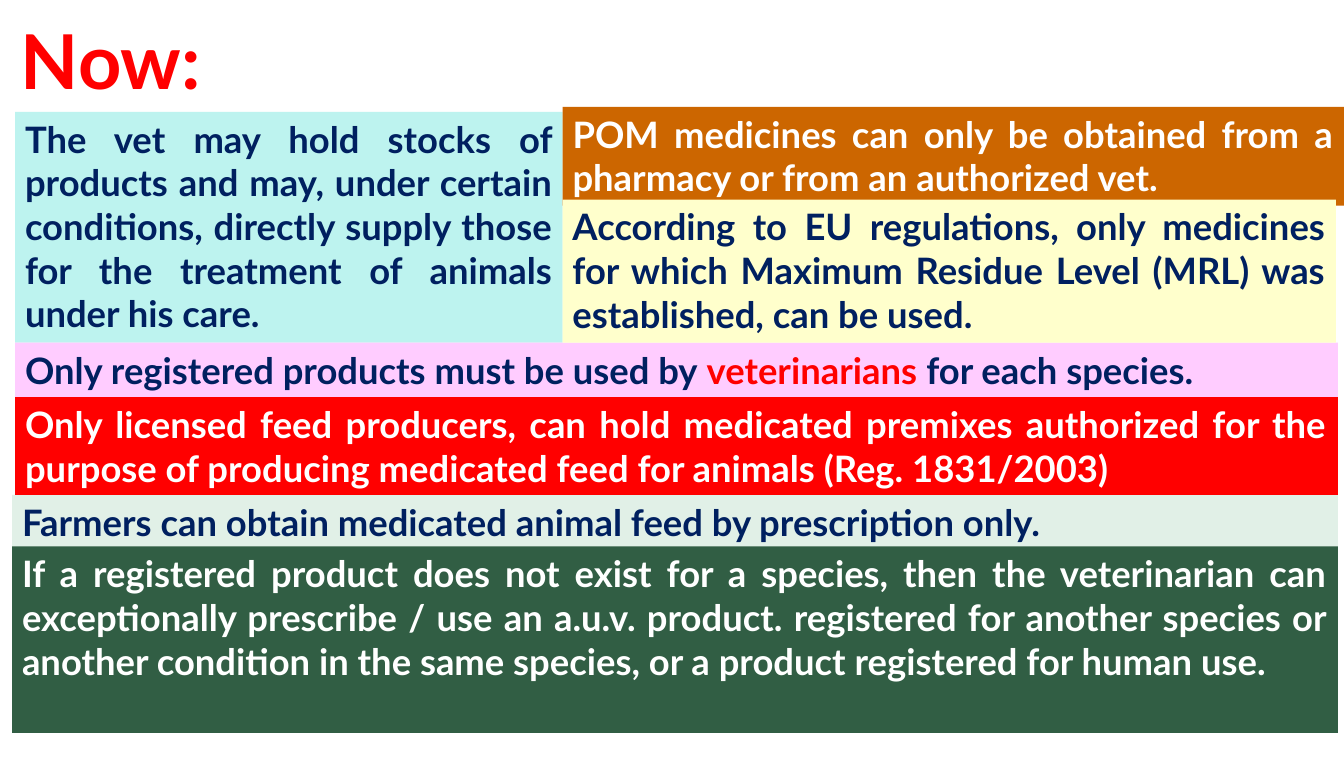
from pptx import Presentation
from pptx import util as u
from pptx.dml.color import RGBColor
from pptx.enum import shapes, text

WIDTH, HEIGHT = 13.33, 7.51
FONT, BODY_SIZE, TITLE_SIZE = "Lato", 26, 54
COLORS = {
    "navy": "002060", "white": "FFFFFF", "red": "FF0000", "aqua": "BDF3EF",
    "orange": "CC6600", "pink": "FFCCFF", "cream": "FFFFCC",
    "mint": "E1F0E7", "green": "315E44",
}

# Column edges and row edges of the grid, in inches
COLS = {"outer": 0.12, "left": 0.15, "middle": 5.58,
        "cream_end": 13.25, "right": 13.27, "edge": WIDTH}
ROWS = {"pom": 1.06, "vet": 1.11, "cream": 1.98, "pom_end": 2.04,
        "registered": 3.4, "licensed": 3.94, "farmers": 4.91,
        "exception": 5.42, "farmers_end": 5.45, "end": 7.27}

TITLE = [("Now:", "red")]

# (left, right, top, bottom, fill, runs), from back to front
PANELS = [
    ("left", "middle", "vet", "registered", "aqua",
     [("The vet may hold stocks of products and may, under certain conditions, "
       "directly supply those for the treatment of animals under his care.", "navy")]),
    ("middle", "edge", "pom", "pom_end", "orange",
     [("POM medicines can only be obtained from a pharmacy or from an "
       "authorized vet.", "white")]),
    ("left", "right", "registered", "licensed", "pink",
     [("Only registered products must be used by ", "navy"),
      ("veterinarians", "red"),
      (" for each species.", "navy")]),
    ("middle", "cream_end", "cream", "registered", "cream",
     [("According to EU regulations, only medicines for which Maximum Residue "
       "Level (MRL) was established, can be used.", "navy")]),
    ("outer", "right", "farmers", "farmers_end", "mint",
     [("Farmers can obtain medicated animal feed by prescription only.", "navy")]),
    ("left", "right", "licensed", "farmers", "red",
     [("Only licensed feed producers, can hold medicated premixes authorized for "
       "the purpose of producing medicated feed for animals (Reg. 1831/2003)", "white")]),
    ("outer", "right", "exception", "end", "green",
     [("If a registered product does not exist for a species, then the "
       "veterinarian can exceptionally prescribe / use an a.u.v. product. "
       "registered for another species or another condition in the same species, "
       "or a product registered for human use.", "white")]),
]


def rgb(name):
    return RGBColor.from_string(COLORS[name])


def write(sp, runs, size=BODY_SIZE, align=text.PP_ALIGN.JUSTIFY):
    tf = sp.text_frame
    tf.word_wrap = True
    tf.vertical_anchor = text.MSO_ANCHOR.TOP
    p = tf.paragraphs[0]
    p.alignment = align
    for words, color in runs:
        r = p.add_run()
        r.text = words
        r.font.name, r.font.size, r.font.bold = FONT, u.Pt(size), True
        r.font.color.rgb = rgb(color)


def add_panel(s, left, right, top, bottom, fill, runs):
    x, y = COLS[left], ROWS[top]
    box = [u.Inches(v) for v in (x, y, COLS[right] - x, ROWS[bottom] - y)]
    sp = s.shapes.add_shape(shapes.MSO_SHAPE.RECTANGLE, *box)
    sp.shadow.inherit = False
    sp.fill.solid()
    sp.fill.fore_color.rgb = rgb(fill)
    sp.line.fill.background()
    write(sp, runs)


def main():
    prs = Presentation()
    prs.slide_width, prs.slide_height = u.Inches(WIDTH), u.Inches(HEIGHT)
    s = prs.slides.add_slide(prs.slide_layouts[6])
    for panel in PANELS:
        add_panel(s, *panel)
    title = s.shapes.add_textbox(*[u.Inches(v) for v in (0.11, 0.09, 4.08, 1.01)])
    write(title, TITLE, size=TITLE_SIZE, align=text.PP_ALIGN.LEFT)
    prs.save("out.pptx")


if __name__ == "__main__":
    main()
